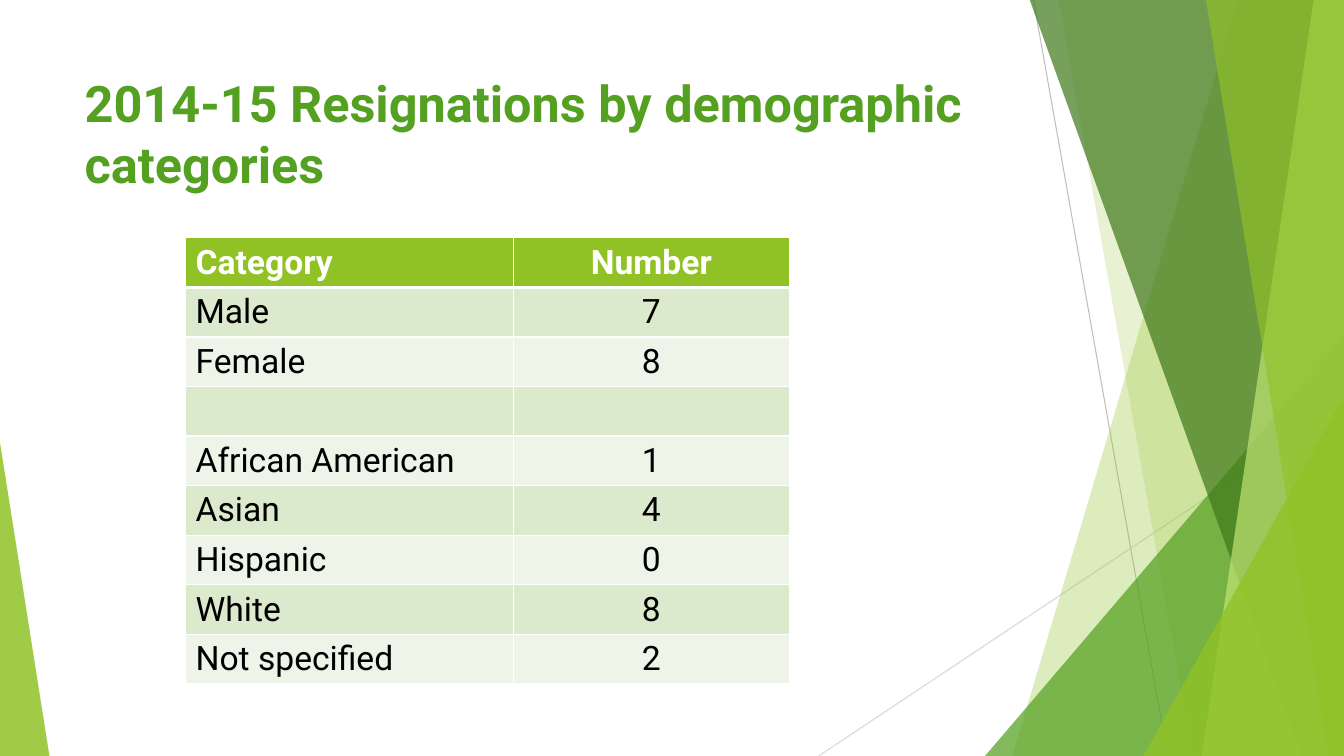
from dataclasses import dataclass
from lxml.etree import SubElement
from pptx import Presentation
from pptx.dml.color import RGBColor
from pptx.enum.shapes import MSO_CONNECTOR, MSO_SHAPE
from pptx.enum.text import MSO_ANCHOR, PP_ALIGN
from pptx.oxml.ns import qn
from pptx.util import Inches, Pt


@dataclass(frozen=True)
class Theme:
    font: str = "Roboto"
    head: int = 36
    body: int = 24
    green: str = "54A021"
    lime: str = "90C226"
    dark: str = "3F7819"
    pale: str = "C0E474"
    white: str = "FFFFFF"
    black: str = "000000"
    bands: tuple = ("DBE9CD", "EEF4E8")
    rule: float = 0.75
    edge: int = 1
    thick: int = 3


theme = Theme()
WIDE, HIGH, TOP = 13.33, 7.5, -0.01

TITLE = "2014-15 Resignations by demographic categories"
ROWS = [
    ("Category", "Number"),
    ("Male", "7"),
    ("Female", "8"),
    ("", ""),
    ("African American", "1"),
    ("Asian", "4"),
    ("Hispanic", "0"),
    ("White", "8"),
    ("Not specified", "2"),
]
COLS = (3.25, 2.74)
ROW_HIGH = 0.49

LINES = [
    ((10.25, 0), (11.58, HIGH), "BFBFBF"),
    ((WIDE, 4.03), (8.12, HIGH), "D9D9D9"),
]
BACK = [
    ("band", 12.28, 10.04, theme.lime, 30),
    ("band", 10.5, 11.83, theme.lime, 20),
    ("wedge", (9.77, 3.33, 3.56, 4.17), 1, theme.green, 72),
    ("band", 10.21, 12.91, theme.dark, 70),
    ("band", 13.03, 11.92, theme.pale, 70),
    ("band", 11.96, 13.18, theme.lime, 65),
    ("wedge", (11.34, 3.93, 1.99, 3.57), 1, theme.lime, 80),
    ("wedge", (0, 4.39, 0.49, 3.11), 0, theme.lime, 85),
]


def color(code):
    return RGBColor.from_string(code)


def draw_line(shapes, start, end, code):
    ends = [Inches(n) for n in (*start, *end)]
    line = shapes.add_connector(MSO_CONNECTOR.STRAIGHT, *ends)
    line.line.color.rgb = color(code)
    line.line.width = Pt(theme.rule)
    SubElement(line.element.spPr, qn("a:effectLst"))


def paint(shape, code, alpha):
    shape.shadow.inherit = False
    shape.line.fill.background()
    shape.fill.solid()
    shape.fill.fore_color.rgb = color(code)
    tint = shape.element.spPr.find(qn("a:solidFill"))[0]
    SubElement(tint, qn("a:alpha")).set("val", str(alpha * 1000))


def band(shapes, upper, lower):
    spots = [(upper, TOP), (WIDE, TOP), (WIDE, HIGH), (lower, HIGH)]
    first, *rest = [(Inches(x), Inches(y)) for x, y in spots]
    form = shapes.build_freeform(*first)
    form.add_line_segments(rest, close=True)
    return form.convert_to_shape()


def wedge(shapes, box, apex):
    shape = shapes.add_shape(MSO_SHAPE.ISOSCELES_TRIANGLE, *map(Inches, box))
    shape.adjustments[0] = apex
    return shape


def style(para, size, code, bold):
    for run in para.runs:
        font = run.font
        font.name, font.size, font.bold = theme.font, Pt(size), bold
        font.color.rgb = color(code)


def border(cell, row):
    props = cell._tc.get_or_add_tcPr()
    thick = {0: "lnB", 1: "lnT"}.get(row)
    for side in ("lnL", "lnR", "lnT", "lnB"):
        width = theme.thick if side == thick else theme.edge
        line = SubElement(props, qn(f"a:{side}"), w=str(Pt(width)))
        fill = SubElement(line, qn("a:solidFill"))
        SubElement(fill, qn("a:srgbClr"), val=theme.white)


def add_grid(shapes):
    box = (1.84, 2.36, sum(COLS), ROW_HIGH * len(ROWS))
    table = shapes.add_table(len(ROWS), len(COLS), *map(Inches, box)).table
    table.horz_banding = False
    for col, width in zip(table.columns, COLS):
        col.width = Inches(width)
    for r, texts in enumerate(ROWS):
        table.rows[r].height = Inches(ROW_HIGH)
        head = r == 0
        for c, text in enumerate(texts):
            cell = table.cell(r, c)
            border(cell, r)
            cell.fill.solid()
            cell.fill.fore_color.rgb = color(theme.lime if head else theme.bands[(r - 1) % 2])
            para = cell.text_frame.paragraphs[0]
            para.text = text
            para.alignment = PP_ALIGN.CENTER if c else PP_ALIGN.LEFT
            style(para, theme.body, theme.white if head else theme.black, head)


def add_title(title):
    title.left, title.top, title.width, title.height = map(Inches, (0.74, 0.67, 9.4, 1.44))
    frame = title.text_frame
    frame.text = TITLE
    frame.word_wrap = True
    frame.vertical_anchor = MSO_ANCHOR.TOP
    para = frame.paragraphs[0]
    para.alignment = PP_ALIGN.LEFT
    style(para, theme.head, theme.green, True)
    title.element.getparent().append(title.element)


def main():
    deck = Presentation()
    deck.slide_width, deck.slide_height = Inches(WIDE), Inches(HIGH)
    shapes = deck.slides.add_slide(deck.slide_layouts[5]).shapes
    makers = {"band": band, "wedge": wedge}
    for line in LINES:
        draw_line(shapes, *line)
    for kind, first, second, code, alpha in BACK:
        paint(makers[kind](shapes, first, second), code, alpha)
    add_title(shapes.title)
    add_grid(shapes)
    deck.save("out.pptx")


if __name__ == "__main__":
    main()
